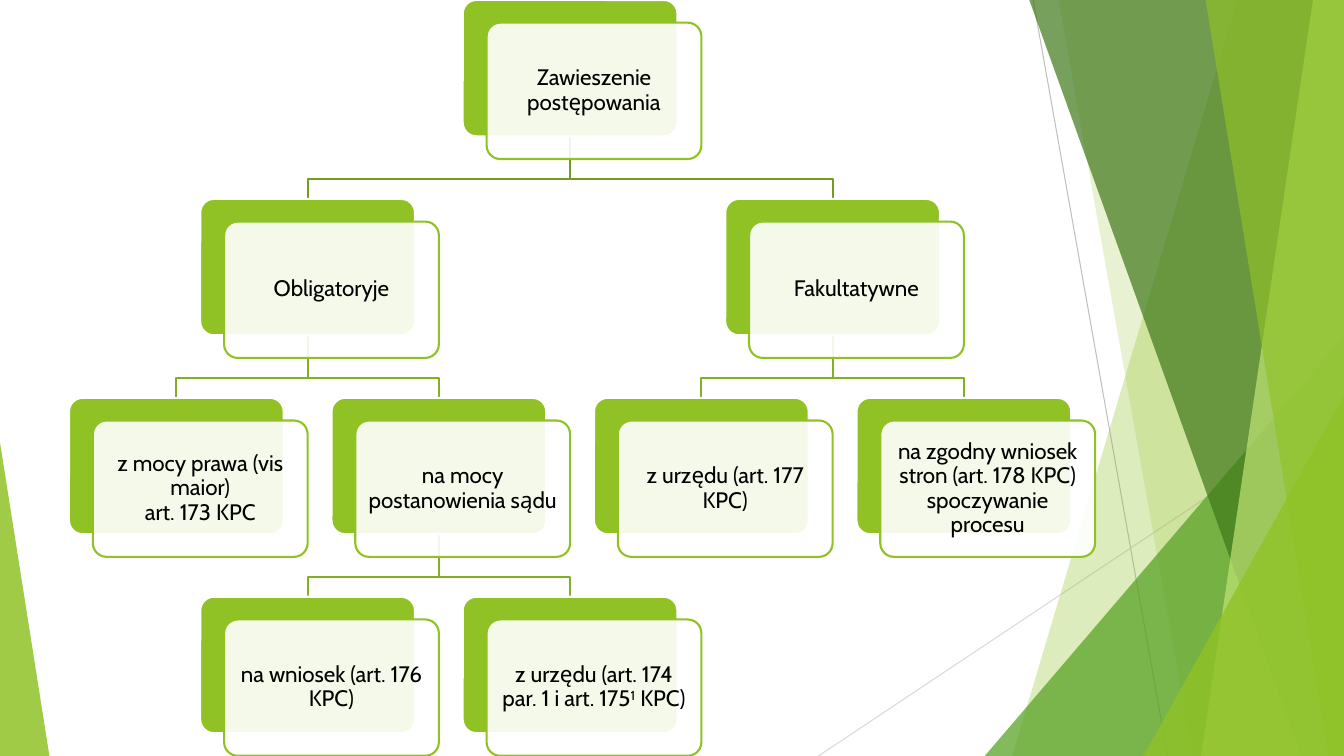
from lxml import etree
from pptx import Presentation
from pptx.dml.color import RGBColor
from pptx.enum import shapes, text
from pptx.oxml import ns
from pptx.util import Pt

COLORS = {
    "white": "FFFFFF", "black": "000000",
    "green": "90C226", "leaf": "54A021", "forest": "3F7819", "lime": "C0E474",
    "root link": "739B1E", "link": "83B022",
    "gray": "BFBFBF", "pale gray": "D9D9D9",
}
PAGE_WIDTH, PAGE_HEIGHT = 960, 540
CARD_WIDTH, CARD_HEIGHT = 153.4, 97.4
FIRST_LEFT, COLUMN_STEP, ROW_STEP = 49.3, 93.75, 142.1
FRONT_RIGHT, FRONT_DOWN = 17.05, 16.2
ELBOW_DROP = 30.7

# key: (column, row, parent, lines); each line is a list of (words, is superscript)
CARDS = {
    "root": (3, 0, None, [[("Zawieszenie postępowania", False)]]),
    "mandatory": (1, 1, "root", [[("Obligatoryje", False)]]),
    "optional": (5, 1, "root", [[("Fakultatywne", False)]]),
    "by law": (0, 2, "mandatory", [[("z mocy prawa (vis maior)", False)],
                                   [("art. 173 KPC", False)]]),
    "by order": (2, 2, "mandatory", [[("na mocy postanowienia sądu", False)]]),
    "ex officio": (4, 2, "optional", [[("z urzędu (art. 177 KPC)", False)]]),
    "joint motion": (6, 2, "optional", [
        [("na zgodny wniosek stron (art. 178 KPC) spoczywanie procesu", False)]]),
    "on motion": (1, 3, "by order", [[("na wniosek (art. 176 KPC)", False)]]),
    "order ex officio": (3, 3, "by order", [
        [("z urzędu (art. 174 par. 1 i art. 175", False), ("1", True), (" KPC)", False)]]),
}


class Canvas:
    font = "Cabin"
    size = 16
    line_width = 1.5

    def __init__(self, page):
        self.page = page

    def color(self, name):
        return RGBColor.from_string(COLORS[name])

    def paint(self, shape, fill=None, opacity=100, line=None):
        shape.shadow.inherit = False
        if fill:
            shape.fill.solid()
            shape.fill.fore_color.rgb = self.color(fill)
            if opacity < 100:
                tint = shape._element.spPr.find(".//" + ns.qn("a:srgbClr"))
                etree.SubElement(tint, ns.qn("a:alpha"), val=str(opacity * 1000))
        else:
            shape.fill.background()
        if line:
            shape.line.color.rgb = self.color(line)
            shape.line.width = Pt(self.line_width)
        else:
            shape.line.fill.background()

    def straight(self, start, end, color):
        line = self.page.shapes.add_connector(
            shapes.MSO_CONNECTOR.STRAIGHT, *map(Pt, start + end))
        line.line.color.rgb = self.color(color)
        line.line.width = Pt(0.75)
        etree.SubElement(line._element.spPr, ns.qn("a:effectLst"))

    def outline(self, points, closed=True, **style):
        corners = [(Pt(x), Pt(y)) for x, y in points]
        builder = self.page.shapes.build_freeform(*corners[0], scale=1.0)
        builder.add_line_segments(corners[1:], close=closed)
        self.paint(builder.convert_to_shape(), **style)

    def preset(self, kind, left, top, width, height, adjust, **style):
        shape = self.page.shapes.add_shape(kind, *map(Pt, (left, top, width, height)))
        shape.adjustments[0] = adjust
        self.paint(shape, **style)
        return shape

    def triangle(self, left, top, width, apex, opacity, fill="green"):
        """Triangle standing on the bottom edge of the page."""
        self.preset(shapes.MSO_SHAPE.ISOSCELES_TRIANGLE, left, top, width,
                    PAGE_HEIGHT - top, apex, fill=fill, opacity=opacity)

    def band(self, top_left, bottom_left, fill, opacity):
        """Slanted band that reaches the right edge of the page."""
        self.outline([(top_left, -0.7), (PAGE_WIDTH, -0.7), (PAGE_WIDTH, PAGE_HEIGHT),
                      (bottom_left, PAGE_HEIGHT)], fill=fill, opacity=opacity)

    def link(self, parent, child, color):
        """Elbow from the bottom of one back card to the top of another."""
        half = CARD_WIDTH / 2
        start_x, start_y = parent[0] + half, parent[1] + CARD_HEIGHT
        end_x, end_y = child[0] + half, child[1]
        elbow_y = start_y + ELBOW_DROP
        self.outline([(start_x, start_y), (start_x, elbow_y), (end_x, elbow_y),
                      (end_x, end_y)], closed=False, line=color)

    def card(self, left, top, lines):
        rounded = shapes.MSO_SHAPE.ROUNDED_RECTANGLE
        self.preset(rounded, left, top, CARD_WIDTH, CARD_HEIGHT, 0.1,
                    fill="green", line="white")
        front = self.preset(rounded, left + FRONT_RIGHT, top + FRONT_DOWN,
                            CARD_WIDTH, CARD_HEIGHT, 0.1,
                            fill="white", opacity=90, line="green")
        self.label(front.text_frame, lines)

    def label(self, frame, lines):
        frame.word_wrap = True
        frame.vertical_anchor = text.MSO_ANCHOR.MIDDLE
        frame.margin_left = frame.margin_right = Pt(4.8)
        frame.margin_top = frame.margin_bottom = Pt(4.8)
        para = frame.paragraphs[0]
        para.alignment = text.PP_ALIGN.CENTER
        para.line_spacing = 0.9
        for number, line in enumerate(lines):
            if number:
                para.add_line_break()
            for words, is_superscript in line:
                span = para.add_run()
                span.text = words
                span.font.name = self.font
                span.font.size = Pt(self.size)
                span.font.color.rgb = self.color("black")
                if is_superscript:
                    span.font._element.set("baseline", "30000")


def draw_backdrop(canvas):
    canvas.straight((738, 0), (834, PAGE_HEIGHT), "gray")
    canvas.straight((PAGE_WIDTH, 290), (584.6, PAGE_HEIGHT), "pale gray")
    canvas.band(884, 723, "green", 30)
    canvas.band(756, 852, "green", 20)
    canvas.triangle(703.4, 240, 256.6, 1, 72, "leaf")
    canvas.band(735, 929.5, "forest", 70)
    canvas.band(938, 858, "lime", 70)
    canvas.band(861, 949, "green", 65)
    canvas.triangle(816.7, 283, 143.3, 1, 80)
    canvas.triangle(0, 316, 35.3, 0, 85)


def draw_tree(canvas):
    corners = {key: (FIRST_LEFT + column * COLUMN_STEP, row * ROW_STEP)
               for key, (column, row, _, _) in CARDS.items()}
    for key, (_, _, parent, _) in CARDS.items():
        if parent:
            color = "root link" if parent == "root" else "link"
            canvas.link(corners[parent], corners[key], color)
    for key, (_, _, _, lines) in CARDS.items():
        canvas.card(*corners[key], lines)


def main():
    deck = Presentation()
    deck.slide_width, deck.slide_height = Pt(PAGE_WIDTH), Pt(PAGE_HEIGHT)
    canvas = Canvas(deck.slides.add_slide(deck.slide_layouts[6]))
    draw_backdrop(canvas)
    draw_tree(canvas)
    deck.save("out.pptx")


if __name__ == "__main__":
    main()
